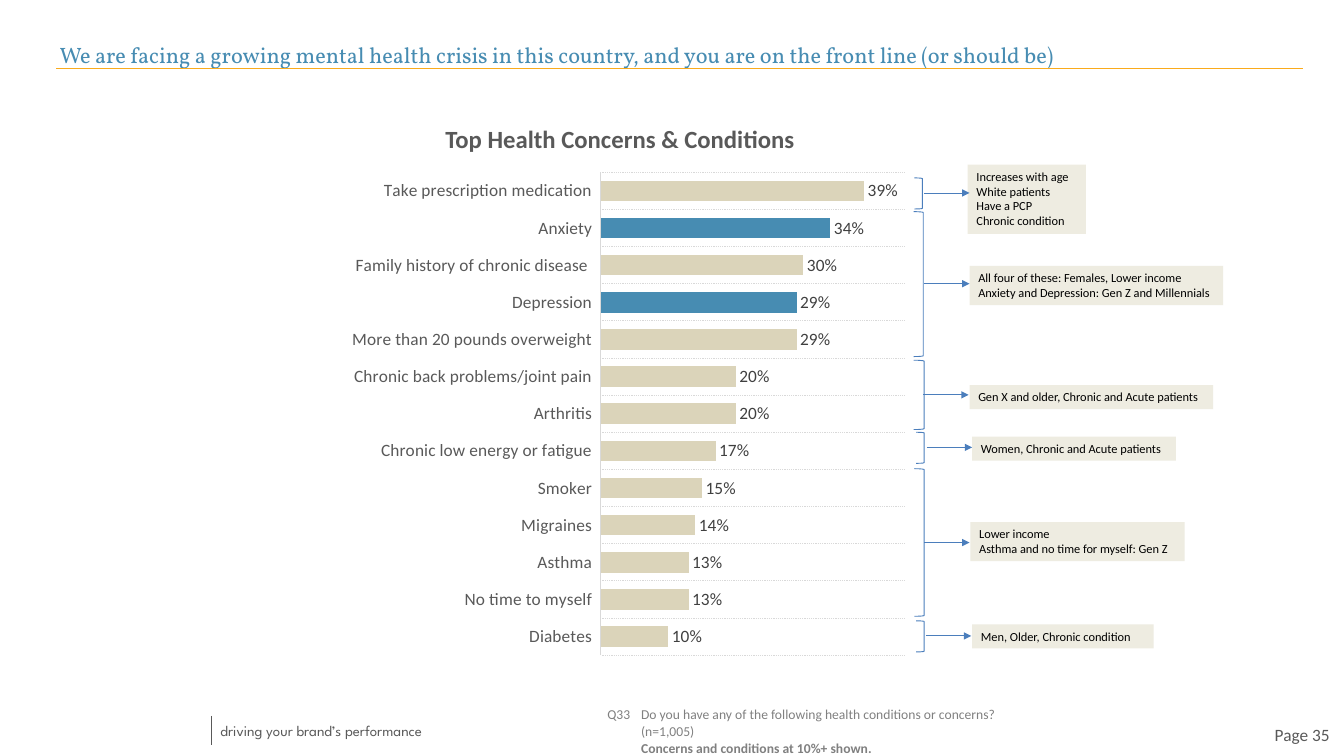
from lxml import etree
from pptx import Presentation
from pptx.chart.data import CategoryChartData
from pptx.dml.color import RGBColor
from pptx.enum.chart import XL_CHART_TYPE, XL_LABEL_POSITION, XL_TICK_LABEL_POSITION, XL_TICK_MARK
from pptx.enum.dml import MSO_LINE
from pptx.enum.shapes import MSO_CONNECTOR, MSO_SHAPE
from pptx.enum.text import MSO_ANCHOR, MSO_AUTO_SIZE, PP_ALIGN
from pptx.oxml import parse_xml
from pptx.oxml.ns import nsdecls, qn
from pptx.util import Pt

PX = 9144  # 100 px to the inch
BLUE = RGBColor(0x47, 0x8C, 0xB2)
BRACKET_BLUE = RGBColor(0x4B, 0x7E, 0xBC)
SAND = RGBColor(0xDB, 0xD4, 0xBA)
PALE_SAND = RGBColor(0xEE, 0xEC, 0xE1)
GOLD = RGBColor(0xFA, 0xAB, 0x1C)
BLACK = RGBColor(0, 0, 0)
DARK_GREY = RGBColor(0x40, 0x40, 0x40)
GREY = RGBColor(0x59, 0x59, 0x59)
MID_GREY = RGBColor(0x80, 0x80, 0x80)
LIGHT_GREY = RGBColor(0xD9, 0xD9, 0xD9)

HEADLINE = ("We are facing a growing mental health crisis in this country, "
            "and you are on the front line (or should be)")
CHART_TITLE = "Top Health Concerns & Conditions"
TAGLINE = "driving your brand’s performance"
PAGE = "Page 35"
QUESTION = "Q33\tDo you have any of the following health conditions or concerns? (n=1,005)"
QUESTION_NOTE = "Concerns and conditions at 10%+ shown."

CONDITIONS = [
    ("Take prescription medication", 0.39),
    ("Anxiety", 0.34),
    ("Family history of chronic disease ", 0.30),
    ("Depression", 0.29),
    ("More than 20 pounds overweight", 0.29),
    ("Chronic back problems/joint pain", 0.20),
    ("Arthritis", 0.20),
    ("Chronic low energy or fatigue", 0.17),
    ("Smoker", 0.15),
    ("Migraines", 0.14),
    ("Asthma", 0.13),
    ("No time to myself", 0.13),
    ("Diabetes", 0.10),
]
HIGHLIGHTED = ("Anxiety", "Depression")

# lines, (box left, top, width), (bracket left, top, width, height), arrow left
CALLOUTS = [
    (["Increases with age", "White patients", "Have a PCP", "Chronic condition"],
     (1088, 185, 133), (1028, 200, 9, 35), 1039),
    (["All four of these: Females, Lower income",
      "Anxiety and Depression: Gen Z and Millennials"],
     (1090, 299, 285), (1027, 238, 11, 163), 1039),
    (["Gen X and older, Chronic and Acute patients"],
     (1090, 433, 274), (1027, 405, 12, 78), 1038),
    (["Women, Chronic and Acute patients"],
     (1093, 491, 229), (1030, 486, 9, 35), 1042),
    (["Lower income", "Asthma and no time for myself: Gen Z"],
     (1091, 587, 241), (1028, 527, 11, 166), 1039),
    (["Men, Older, Chronic condition"],
     (1093, 702, 204), (1030, 698, 9, 35), 1041),
]
ARROW_LENGTH = 51
CALLOUT_LINE = 17
CALLOUT_PADDING = 10


def px(*lengths):
    return [length * PX for length in lengths]


def write_text(frame, lines, size, color, font="Calibri", bold=False,
               align=PP_ALIGN.LEFT, anchor=MSO_ANCHOR.TOP, inset=(10, 5)):
    frame.word_wrap = True
    frame.auto_size = MSO_AUTO_SIZE.NONE
    frame.vertical_anchor = anchor
    frame.margin_left = frame.margin_right = inset[0] * PX
    frame.margin_top = frame.margin_bottom = inset[1] * PX
    for index, line in enumerate(lines):
        paragraph = frame.add_paragraph() if index else frame.paragraphs[0]
        paragraph.alignment = align
        run = paragraph.add_run()
        run.text = line
        set_font(run.font, size, color, font, bold)


def set_font(font, size, color, name="Calibri", bold=False):
    font.size, font.name, font.bold = Pt(size), name, bold
    font.color.rgb = color


def add_text(slide, box, lines, size, color, **text_format):
    shape = slide.shapes.add_textbox(*px(*box))
    write_text(shape.text_frame, lines, size, color, **text_format)
    return shape


def add_line(slide, start, end, color, width=0.75, arrow=False):
    line = slide.shapes.add_connector(MSO_CONNECTOR.STRAIGHT, *px(*start, *end))
    line.line.color.rgb = color
    line.line.width = Pt(width)
    if arrow:
        etree.SubElement(line.line._get_or_add_ln(), qn("a:tailEnd"), type="triangle")
    etree.SubElement(line._element.spPr, qn("a:effectLst"))


def add_callout(slide, lines, box, bracket, arrow_left):
    left, top, width = box
    height = CALLOUT_PADDING + CALLOUT_LINE * len(lines)
    label = add_text(slide, (left, top, width, height), lines, 10, BLACK)
    label.fill.solid()
    label.fill.fore_color.rgb = PALE_SAND

    span = slide.shapes.add_shape(MSO_SHAPE.RIGHT_BRACKET, *px(*bracket))
    span.shadow.inherit = False
    span.fill.background()
    span.line.color.rgb = BRACKET_BLUE
    span.line.width = Pt(0.75)

    middle = bracket[1] + bracket[3] // 2
    add_line(slide, (arrow_left, middle), (arrow_left + ARROW_LENGTH, middle),
             BRACKET_BLUE, arrow=True)


def add_conditions_chart(slide, box):
    data = CategoryChartData(number_format="0%")
    data.categories = [name for name, _ in CONDITIONS]
    data.add_series("Series 1", [share for _, share in CONDITIONS])
    chart = slide.shapes.add_chart(XL_CHART_TYPE.BAR_CLUSTERED, *px(*box), data).chart
    chart.has_legend = chart.has_title = False
    set_font(chart.font, 10, BLACK)

    names = chart.category_axis
    names.reverse_order = True
    names.major_tick_mark = names.minor_tick_mark = XL_TICK_MARK.NONE
    names.tick_label_position = XL_TICK_LABEL_POSITION.LOW
    set_font(names.tick_labels.font, 14, GREY)
    names.has_major_gridlines = True
    for line in (names.format.line, names.major_gridlines.format.line):
        line.color.rgb = LIGHT_GREY
        line.width = Pt(0.75)
    names.major_gridlines.format.line.dash_style = MSO_LINE.ROUND_DOT

    shares = chart.value_axis
    shares.visible = shares.has_major_gridlines = False
    shares.minimum_scale, shares.maximum_scale = 0, 0.45

    plot = chart.plots[0]
    plot.gap_width = 80
    plot.vary_by_categories = False
    plot.has_data_labels = True
    labels = plot.data_labels
    labels.show_value = True
    labels.position = XL_LABEL_POSITION.OUTSIDE_END
    labels.number_format, labels.number_format_is_linked = "0%", False
    set_font(labels.font, 14, DARK_GREY)

    bars = plot.series[0]
    bars.format.fill.solid()
    bars.format.fill.fore_color.rgb = SAND
    for index, (name, _) in enumerate(CONDITIONS):
        if name in HIGHLIGHTED:
            fill = bars.points[index].format.fill
            fill.solid()
            fill.fore_color.rgb = BLUE

    area = chart._chartSpace.chart.plotArea
    for old in area.findall(qn("c:layout")):
        area.remove(old)
    area.insert(0, parse_xml(
        f'<c:layout {nsdecls("c")}><c:manualLayout><c:layoutTarget val="inner"/>'
        '<c:xMode val="edge"/><c:yMode val="edge"/><c:x val="0.447"/><c:y val="0.019"/>'
        '<c:w val="0.533"/><c:h val="0.961"/></c:manualLayout></c:layout>'))


def add_question(slide, box):
    question = add_text(slide, box, [QUESTION, QUESTION_NOTE], 11, MID_GREY)
    for paragraph, indent in zip(question.text_frame.paragraphs, (-38, 0)):
        paragraph.line_spacing = 1.07
        properties = paragraph._p.get_or_add_pPr()
        properties.set("marL", str(38 * PX))
        properties.set("indent", str(indent * PX))
    question.text_frame.paragraphs[1].runs[0].font.bold = True


def main():
    deck = Presentation()
    deck.slide_width, deck.slide_height = px(1511, 850)
    slide = deck.slides.add_slide(deck.slide_layouts[5])

    headline = slide.shapes.title
    headline.left, headline.top, headline.width, headline.height = px(56, 37, 1408, 45)
    write_text(headline.text_frame, [HEADLINE], 18, BLUE, font="Vollkorn",
               anchor=MSO_ANCHOR.BOTTOM, inset=(11, 6))
    add_line(slide, (63, 77), (1465, 77), GOLD, width=1)

    add_conditions_chart(slide, (389, 183, 641, 565))
    add_text(slide, (418, 134, 558, 44), [CHART_TITLE], 20, GREY, bold=True,
             align=PP_ALIGN.CENTER)
    for callout in CALLOUTS:
        add_callout(slide, *callout)

    add_line(slide, (238, 805), (238, 838), GREY)
    add_text(slide, (238, 806, 295, 30), [TAGLINE], 12, GREY, font="League Spartan")
    add_question(slide, (673, 787, 516, 49))
    add_text(slide, (1375, 810, 131, 33), [PAGE], 14, GREY, align=PP_ALIGN.RIGHT,
             anchor=MSO_ANCHOR.MIDDLE, inset=(11, 6))
    deck.save("out.pptx")


if __name__ == "__main__":
    main()
